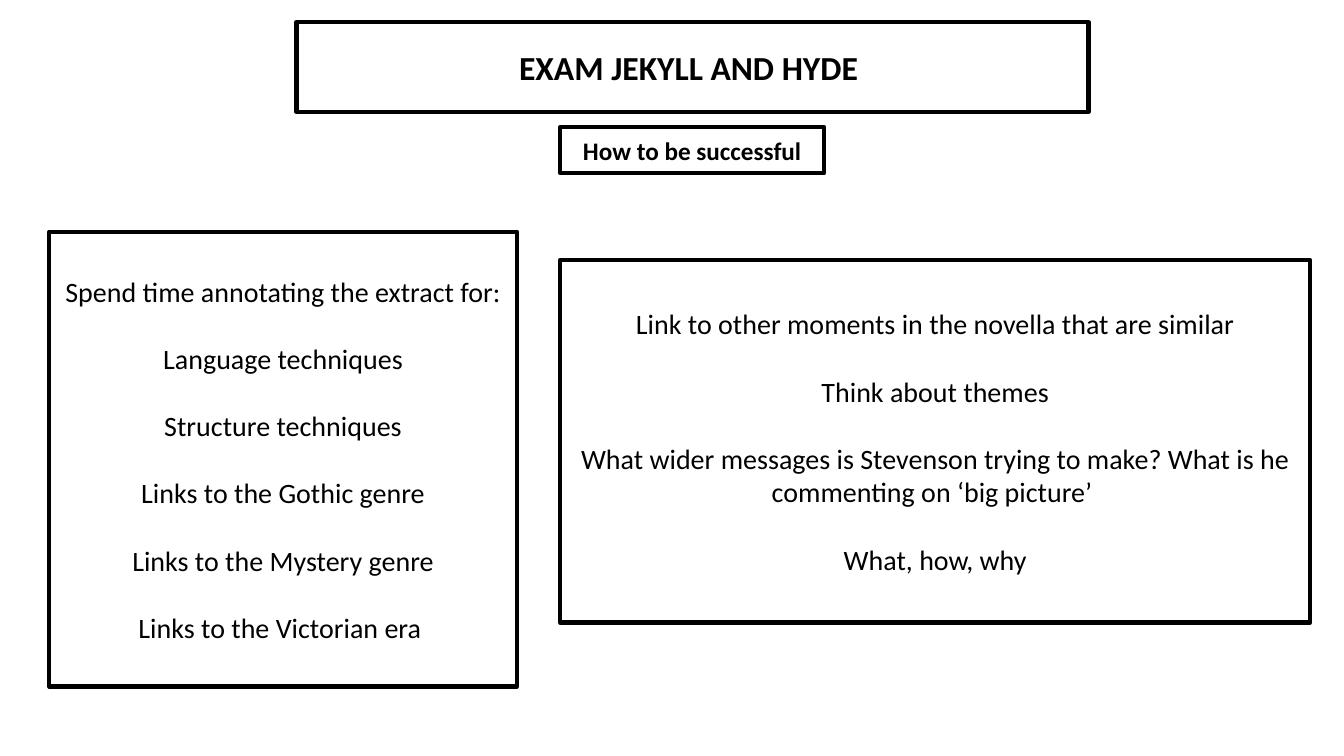
"""Build a revision slide with a title, a subtitle and two boxes of advice."""
from pptx import Presentation
from pptx.dml.color import RGBColor
from pptx.enum.shapes import MSO_SHAPE
from pptx.enum.text import MSO_ANCHOR, MSO_AUTO_SIZE, PP_ALIGN
from pptx.util import Cm, Pt

COLOURS = {"paper": "FFFFFF", "ink": "000000"}
FONT = "Calibri"
PARAGRAPH_GAP = Pt(24)

TITLE = {"box": (7.47, 0.56, 19.96, 2.26), "size": 24, "bold": True,
         "lines": ["EXAM JEKYLL AND HYDE "]}
PANELS = [
    {"box": (14.12, 3.2, 6.65, 1.17), "size": 18, "bold": True,
     "lines": ["How to be successful"]},
    {"box": (1.24, 5.84, 11.79, 11.46), "size": 20, "bold": False,
     "lines": ["Spend time annotating the extract for:",
               "Language techniques",
               "Structure techniques",
               "Links to the Gothic genre",
               "Links to the Mystery genre",
               "Links to the Victorian era "]},
    {"box": (14.12, 6.55, 18.9, 9.14), "size": 20, "bold": False,
     "lines": ["Link to other moments in the novella that are similar",
               "Think about themes",
               "What wider messages is Stevenson trying to make? "
               "What is he commenting on ‘big picture’ ",
               "What, how, why"]},
]


def colour(name):
    return RGBColor.from_string(COLOURS[name])


def format_panel(shape, panel):
    shape.left, shape.top, shape.width, shape.height = map(Cm, panel["box"])
    shape.fill.solid()
    shape.fill.fore_color.rgb = colour("paper")
    shape.line.color.rgb = colour("ink")
    shape.line.width = Pt(3)

    frame = shape.text_frame
    frame.word_wrap = True
    frame.auto_size = MSO_AUTO_SIZE.NONE
    frame.vertical_anchor = MSO_ANCHOR.MIDDLE
    for index, line in enumerate(panel["lines"]):
        paragraph = frame.add_paragraph() if index else frame.paragraphs[0]
        paragraph.alignment = PP_ALIGN.CENTER
        paragraph.space_before = PARAGRAPH_GAP if index else Pt(0)
        run = paragraph.add_run()
        run.text = line
        run.font.name = FONT
        run.font.size = Pt(panel["size"])
        run.font.bold = panel["bold"]
        run.font.color.rgb = colour("ink")


def main():
    presentation = Presentation()
    presentation.slide_width, presentation.slide_height = Cm(33.87), Cm(19.05)
    slide = presentation.slides.add_slide(presentation.slide_layouts[5])
    format_panel(slide.shapes.title, TITLE)
    for panel in PANELS:
        shape = slide.shapes.add_shape(MSO_SHAPE.RECTANGLE, *map(Cm, panel["box"]))
        shape.shadow.inherit = False
        format_panel(shape, panel)
    presentation.save("out.pptx")


if __name__ == "__main__":
    main()
